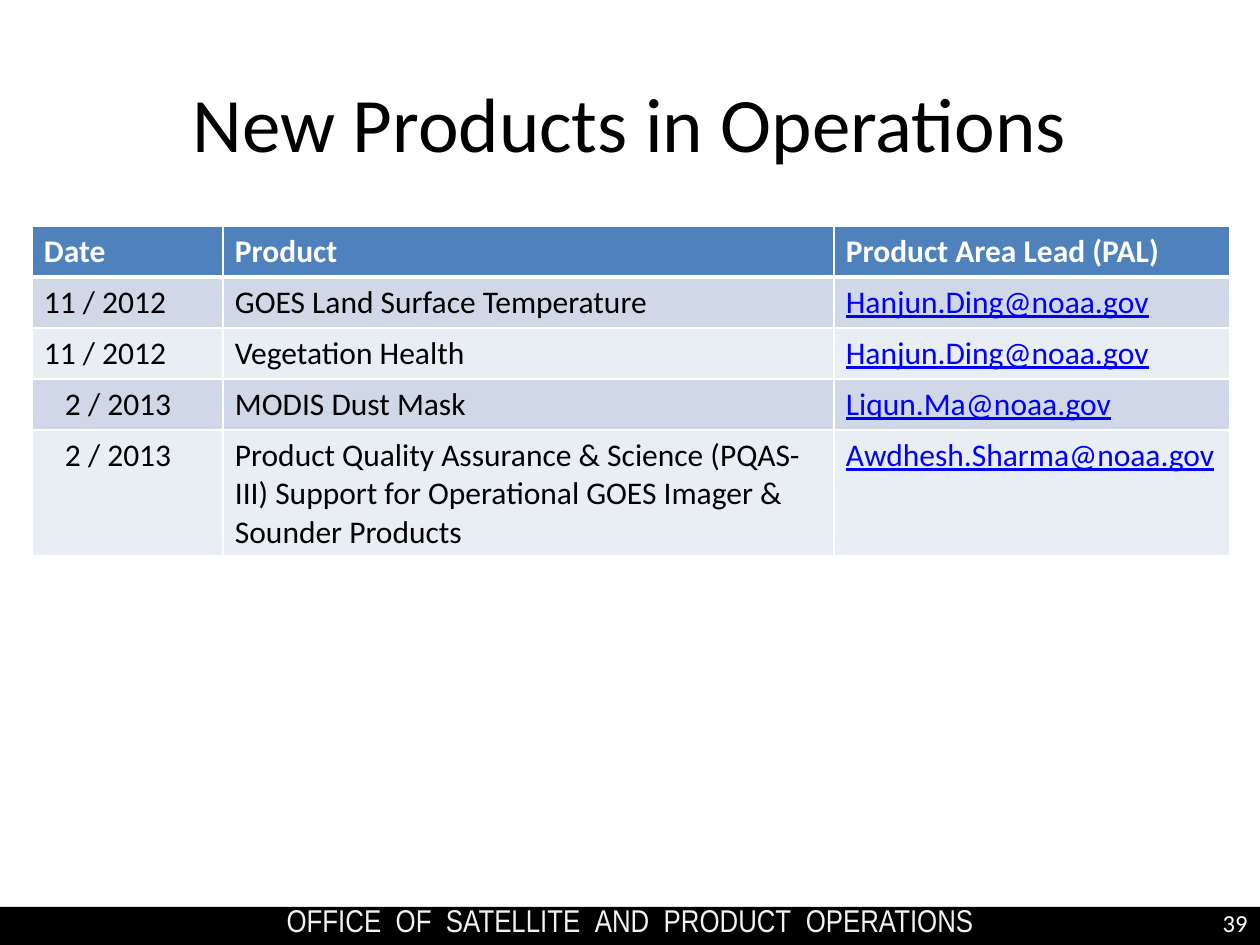
from dataclasses import dataclass

from lxml import etree
from pptx import Presentation
from pptx import util as u
from pptx.dml.color import RGBColor
from pptx.enum import shapes, text
from pptx.oxml import ns

EMU_PER_PX = 914400 / 126


@dataclass(frozen=True)
class Theme:
    body_font: str = "Calibri"
    footer_font: str = "Arial Narrow"
    title_size: int = 44
    body_size: int = 18
    number_size: int = 14
    black: str = "000000"
    white: str = "FFFFFF"
    footer_text: str = "F2F2F2"
    header: str = "4F81BD"
    bands: tuple[str, str] = ("D0D8E8", "E9EDF4")
    email: str = "0000FF"
    rule: int = 1
    header_rule: int = 3
    word_gap: float = 4.1


@dataclass(frozen=True)
class Box:
    left: int
    top: int
    width: int
    height: int

    def emu(self) -> list[int]:
        return [px(n) for n in (self.left, self.top, self.width, self.height)]


@dataclass(frozen=True)
class Product:
    date: str
    name: str
    lead: str
    date_indent: int = 0


THEME = Theme()
HEADINGS = ("Date", "Product", "Product Area Lead (PAL)")
PRODUCTS = (
    Product("11 / 2012", "GOES Land Surface Temperature", "Hanjun.Ding@noaa.gov"),
    Product("11 / 2012", "Vegetation Health", "Hanjun.Ding@noaa.gov"),
    Product("2 / 2013", "MODIS Dust Mask", "Liqun.Ma@noaa.gov", 21),
    Product("2 / 2013", "Product Quality Assurance & Science (PQAS-III) Support "
            "for Operational GOES Imager & Sounder Products",
            "Awdhesh.Sharma@noaa.gov", 21),
)
COLUMN_WIDTHS = (191, 611, 396)
ROW_HEIGHT, LAST_ROW_HEIGHT = 51, 126
CELL_MARGIN = 12


def px(length: int) -> int:
    return round(length * EMU_PER_PX)


def style(paragraph, size: int, color: str, font: str = THEME.body_font) -> None:
    paragraph.font.name = font
    paragraph.font.size = u.Pt(size)
    paragraph.font.color.rgb = RGBColor.from_string(color)


def add_label(slide, box: Box, align, inset: int = 6):
    """Add an empty one-paragraph text box and return its paragraph."""
    frame = slide.shapes.add_textbox(*box.emu()).text_frame
    frame.word_wrap = True
    frame.margin_top = frame.margin_bottom = px(inset)
    frame.vertical_anchor = text.MSO_ANCHOR.TOP
    frame.paragraphs[0].alignment = align
    return frame.paragraphs[0]


def add_borders(cell, top: int, bottom: int) -> None:
    properties = cell._tc.get_or_add_tcPr()
    widths = {"lnL": THEME.rule, "lnR": THEME.rule, "lnT": top, "lnB": bottom}
    for side, width in widths.items():
        line = etree.SubElement(properties, ns.qn(f"a:{side}"), w=str(u.Pt(width)))
        fill = etree.SubElement(line, ns.qn("a:solidFill"))
        etree.SubElement(fill, ns.qn("a:srgbClr"), val=THEME.white)


def fill_cell(cell, words: str, fill: str, color: str, top: int = THEME.rule,
              bottom: int = THEME.rule, indent: int = 0):
    """Write and paint one cell and return its paragraph."""
    add_borders(cell, top, bottom)
    cell.fill.solid()
    cell.fill.fore_color.rgb = RGBColor.from_string(fill)
    cell.margin_left = px(CELL_MARGIN + indent)
    cell.text = words
    paragraph = cell.text_frame.paragraphs[0]
    style(paragraph, THEME.body_size, color)
    return paragraph


def add_footer(slide) -> None:
    # Black band
    band = slide.shapes.add_shape(shapes.MSO_SHAPE.RECTANGLE, *Box(0, 907, 1260, 38).emu())
    band.shadow.inherit = False
    band.fill.solid()
    band.fill.fore_color.rgb = RGBColor.from_string(THEME.black)
    band.line.fill.background()

    # Page number
    number = add_label(slide, Box(966, 902, 294, 43), text.PP_ALIGN.RIGHT)
    number.text = "39"
    style(number, THEME.number_size, THEME.white)

    # Office name, with widened gaps between words
    office = add_label(slide, Box(0, 901, 1260, 38), text.PP_ALIGN.CENTER, inset=0)
    for index, word in enumerate("OFFICE OF SATELLITE AND PRODUCT OPERATIONS".split()):
        if index:
            gap = office.add_run()
            gap.text = " "
            gap._r.get_or_add_rPr().set("spc", str(round(THEME.word_gap * 100)))
        office.add_run().text = word
    style(office, THEME.body_size, THEME.footer_text, THEME.footer_font)


def add_product_table(slide) -> None:
    heights = [ROW_HEIGHT] * len(PRODUCTS) + [LAST_ROW_HEIGHT]
    box = Box(32, 226, sum(COLUMN_WIDTHS), sum(heights))
    table = slide.shapes.add_table(len(heights), len(COLUMN_WIDTHS), *box.emu()).table
    for column, width in zip(table.columns, COLUMN_WIDTHS):
        column.width = px(width)
    for row, height in zip(table.rows, heights):
        row.height = px(height)

    # Header row
    for column, heading in enumerate(HEADINGS):
        paragraph = fill_cell(table.cell(0, column), heading, THEME.header, THEME.white,
                              bottom=THEME.header_rule)
        paragraph.font.bold = True

    # Product rows in alternating bands
    for row, product in enumerate(PRODUCTS, start=1):
        band = THEME.bands[(row - 1) % 2]
        top = THEME.header_rule if row == 1 else THEME.rule
        date, name, lead = (table.cell(row, column) for column in range(3))
        fill_cell(date, product.date, band, THEME.black, top, indent=product.date_indent)
        fill_cell(name, product.name, band, THEME.black, top)
        fill_cell(lead, product.lead, band, THEME.email, top).font.underline = True


def add_title(slide) -> None:
    box = Box(63, 76, 1134, 92)
    title = add_label(slide, box, text.PP_ALIGN.CENTER, inset=0)
    title.text = "New Products in Operations"
    style(title, THEME.title_size, THEME.black)


def main() -> None:
    deck = Presentation()
    deck.slide_width, deck.slide_height = px(1260), px(945)
    slide = deck.slides.add_slide(deck.slide_layouts[6])
    add_footer(slide)
    add_product_table(slide)
    add_title(slide)
    deck.save("out.pptx")


if __name__ == "__main__":
    main()
